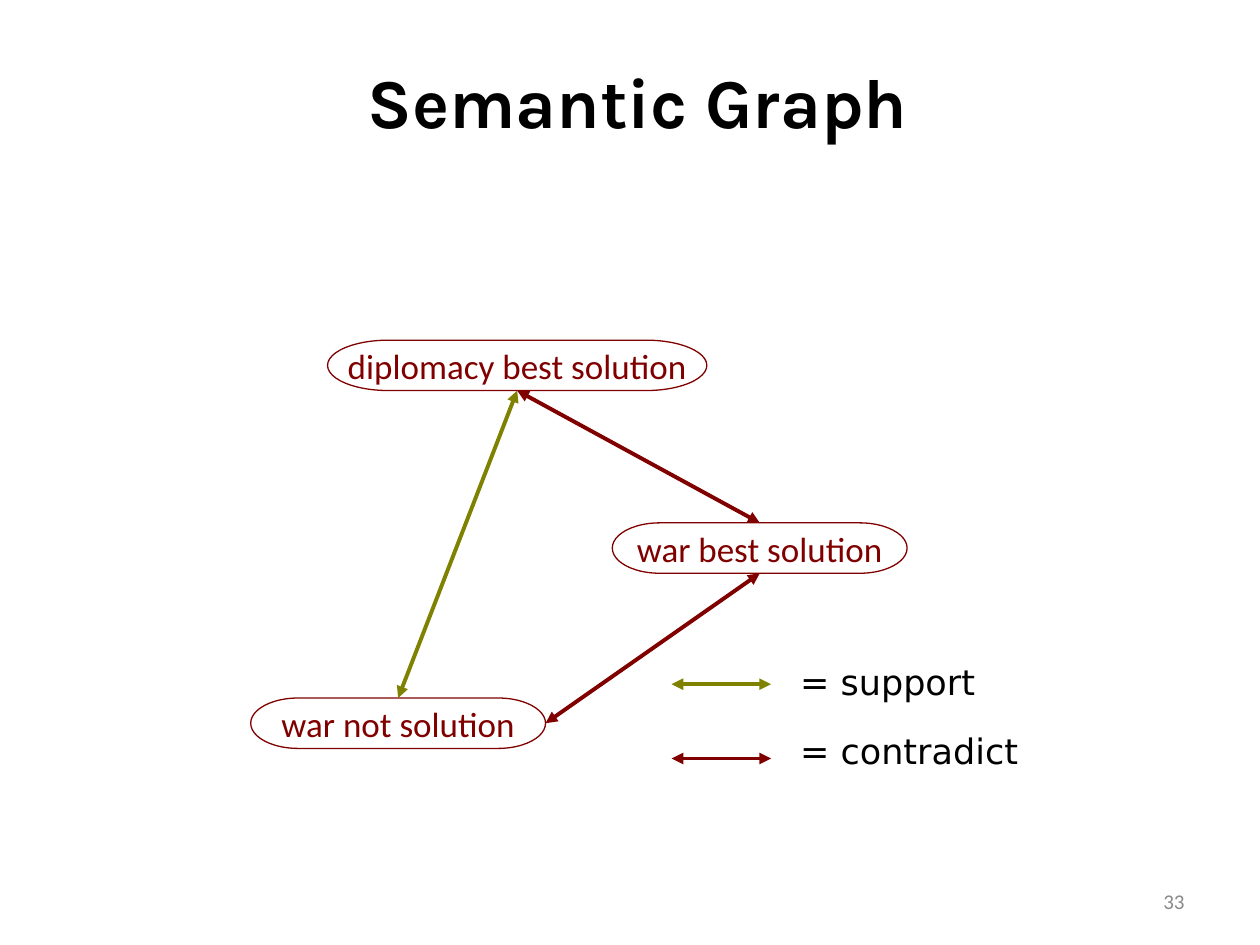
from lxml import etree
from pptx import Presentation
from pptx.dml.color import RGBColor
from pptx.enum import shapes, text
from pptx.oxml.ns import qn
from pptx.util import Inches, Pt

BLACK, GREY = "000000", "898989"
SUPPORT, CONTRADICT = "7F8100", "800000"
TOP, BOTTOM, RIGHT = 0, 2, 3
NODE_HEIGHT = 0.4


def color(hex_code):
    return RGBColor.from_string(hex_code)


def write(shape, wording, font_name, size, hex_code, align, bold=False):
    frame = shape.text_frame
    frame.text = wording
    frame.vertical_anchor = text.MSO_ANCHOR.MIDDLE
    paragraph = frame.paragraphs[0]
    paragraph.alignment = align
    font = paragraph.runs[0].font
    font.name, font.size, font.bold = font_name, Pt(size), bold
    font.color.rgb = color(hex_code)
    return frame


def add_label(slide, box, *style, **options):
    label = slide.shapes.add_textbox(*map(Inches, box))
    frame = write(label, *style, **options)
    frame.word_wrap = True
    return frame


def add_node(slide, left, top, width, wording):
    node = slide.shapes.add_shape(
        shapes.MSO_SHAPE.FLOWCHART_TERMINATOR,
        Inches(left), Inches(top), Inches(width), Inches(NODE_HEIGHT))
    node.shadow.inherit = False
    node.fill.background()
    node.line.color.rgb = color(CONTRADICT)
    node.line.width = Pt(0.75)
    frame = write(node, wording, "Calibri", 20, CONTRADICT, text.PP_ALIGN.CENTER)
    frame.word_wrap = False
    return node


def add_arrow(slide, hex_code, start=(0, 0), end=(0, 0)):
    arrow = slide.shapes.add_connector(
        shapes.MSO_CONNECTOR.STRAIGHT, *map(Inches, (*start, *end)))
    arrow.line.color.rgb = color(hex_code)
    arrow.line.width = Pt(2.25)
    outline = arrow.line._get_or_add_ln()
    for tip in ("a:headEnd", "a:tailEnd"):
        etree.SubElement(outline, qn(tip), type="triangle")
    etree.SubElement(arrow._element.spPr, qn("a:effectLst"))
    return arrow


def link(slide, hex_code, source, source_side, target, target_side):
    arrow = add_arrow(slide, hex_code)
    arrow.begin_connect(source, source_side)
    arrow.end_connect(target, target_side)


def add_legend_entry(slide, hex_code, wording, arrow_y, label_top, label_width):
    add_arrow(slide, hex_code, (5.33, arrow_y), (6.12, arrow_y))
    frame = add_label(slide, (6.35, label_top, label_width, 0.4), wording,
                      "DejaVu Sans", 20, BLACK, text.PP_ALIGN.LEFT)
    frame.margin_left = 0
    frame.paragraphs[0].line_spacing = 0.9


def main():
    prs = Presentation()
    prs.slide_width, prs.slide_height = Inches(10), Inches(7.5)
    slide = prs.slides.add_slide(prs.slide_layouts[6])

    add_label(slide, (0.56, 0.17, 9, 1.25), "Semantic Graph",
              "Karla", 40, BLACK, text.PP_ALIGN.CENTER, bold=True)
    add_label(slide, (7.17, 6.95, 2.33, 0.4), "33",
              "Calibri", 12, GREY, text.PP_ALIGN.RIGHT)

    add_legend_entry(slide, SUPPORT, "= support", 5.43, 5.23, 1.65)
    add_legend_entry(slide, CONTRADICT, "= contradict", 6.02, 5.78, 2.28)

    war_best = add_node(slide, 4.86, 4.15, 2.34, "war best solution")
    war_not = add_node(slide, 1.99, 5.54, 2.34, "war not solution")
    diplomacy = add_node(slide, 2.6, 2.7, 3.01, "diplomacy best solution")

    link(slide, CONTRADICT, diplomacy, BOTTOM, war_best, TOP)
    link(slide, CONTRADICT, war_not, RIGHT, war_best, BOTTOM)
    link(slide, SUPPORT, war_not, TOP, diplomacy, BOTTOM)

    prs.save("out.pptx")


if __name__ == "__main__":
    main()
